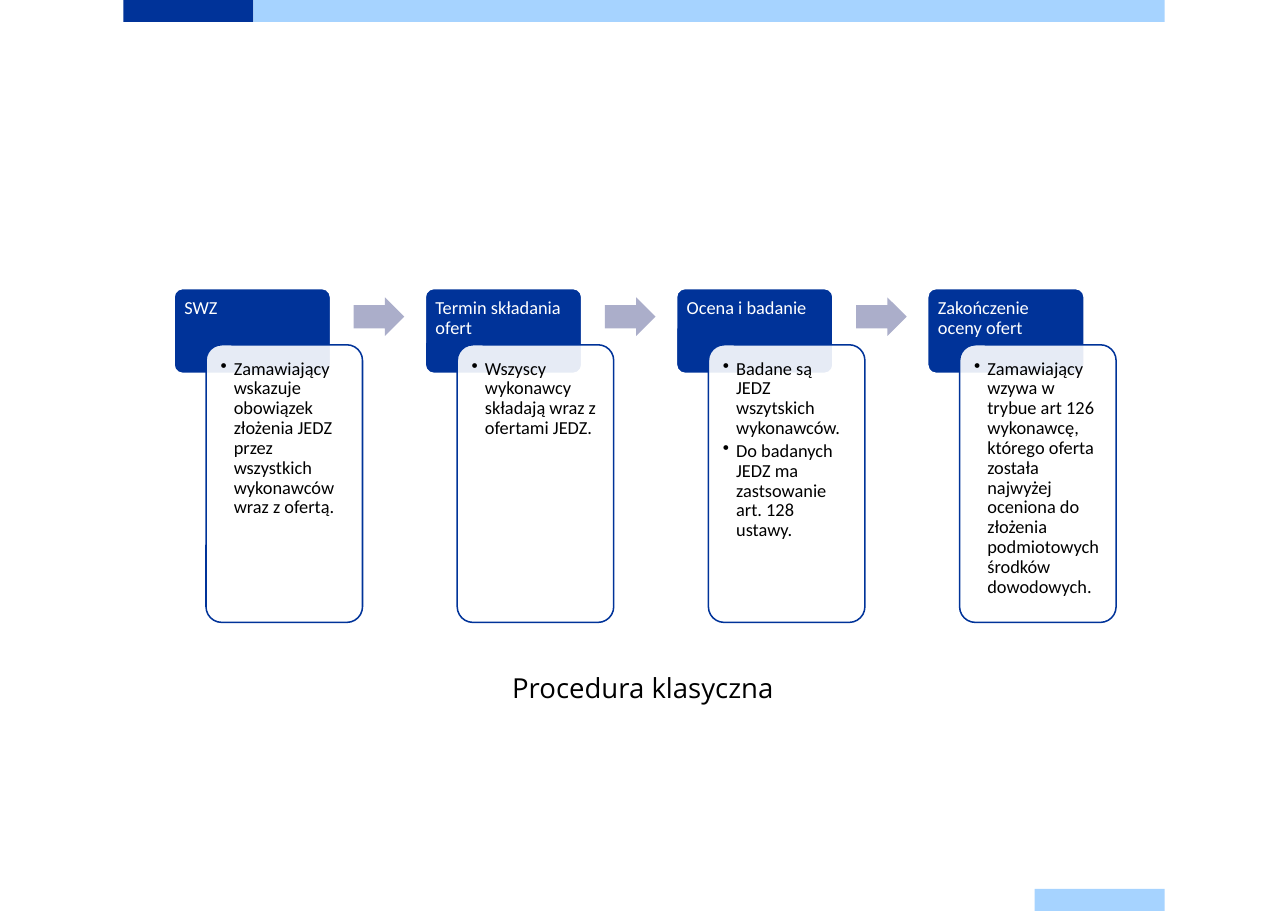
from lxml.etree import SubElement
from pptx import Presentation
from pptx.dml.color import RGBColor
from pptx.enum.shapes import MSO_SHAPE
from pptx.enum.text import MSO_ANCHOR, MSO_AUTO_SIZE, PP_ALIGN
from pptx.oxml.ns import qn
from pptx.util import Inches, Pt

NAVY = "003399"
SKY = "A6D3FF"
WHITE = "FFFFFF"
BLACK = "000000"
STEP = 2.28


def add_block(kind, left, top, width, height, fill, line=None):
    block = page.shapes.add_shape(kind, Inches(left), Inches(top), Inches(width), Inches(height))
    block.shadow.inherit = False
    block.fill.solid()
    block.fill.fore_color.rgb = RGBColor.from_string(fill)
    if line:
        block.line.color.rgb = RGBColor.from_string(line)
        block.line.width = Pt(1)
    else:
        block.line.fill.background()
    return block


def write(box, texts, color, inset, space_after=0, bulleted=False):
    frame = box.text_frame
    frame.word_wrap = True
    frame.vertical_anchor = MSO_ANCHOR.TOP
    frame.margin_left = frame.margin_right = frame.margin_top = frame.margin_bottom = Inches(inset)
    for number, text in enumerate(texts):
        para = frame.add_paragraph() if number else frame.paragraphs[0]
        para.alignment = PP_ALIGN.LEFT
        para.line_spacing = 0.9
        para.space_after = Pt(space_after)
        if bulleted:
            properties = para._p.get_or_add_pPr()
            properties.set("marL", str(Inches(0.12)))
            properties.set("indent", str(Inches(-0.12)))
            SubElement(properties, qn("a:buChar"), char="•")
        span = para.add_run()
        span.text = text
        span.font.name = "Calibri"
        span.font.size = Pt(12)
        span.font.color.rgb = RGBColor.from_string(color)


deck = Presentation()
deck.slide_width = Inches(11.69)
deck.slide_height = Inches(8.27)
page = deck.slides.add_slide(deck.slide_layouts[6])

for left, top, width, color in [(1.12, 0, 1.18, NAVY), (2.3, 0, 8.27, SKY), (9.39, 8.07, 1.18, SKY)]:
    add_block(MSO_SHAPE.RECTANGLE, left, top, width, 0.2, color)

stages = [
    ("SWZ", ["Zamawiający wskazuje obowiązek złożenia JEDZ przez wszystkich wykonawców wraz z ofertą."]),
    ("Termin składania ofert", ["Wszyscy wykonawcy składają wraz z ofertami JEDZ."]),
    ("Ocena i badanie", [
        "Badane są JEDZ wszytskich wykonawców.",
        "Do badanych JEDZ ma zastsowanie art. 128 ustawy.",
    ]),
    ("Zakończenie oceny ofert", [
        "Zamawiający wzywa w trybue art 126 wykonawcę, którego oferta została najwyżej "
        "oceniona do złożenia podmiotowych środków dowodowych.",
    ]),
]

for index, (heading, details) in enumerate(stages):
    left = 1.58 + index * STEP

    header = add_block(MSO_SHAPE.ROUNDED_RECTANGLE, left, 2.62, 1.42, 0.77, NAVY, WHITE)
    header.adjustments[0] = 0.1
    write(header, [heading], WHITE, 0.07)

    card = add_block(MSO_SHAPE.ROUNDED_RECTANGLE, left + 0.29, 3.13, 1.42, 2.52, WHITE, NAVY)
    card.adjustments[0] = 0.1
    card_color = card._element.spPr.find(qn("a:solidFill")).find(qn("a:srgbClr"))
    SubElement(card_color, qn("a:alpha"), val="90000")
    write(card, details, BLACK, 0.09, space_after=2, bulleted=True)

    if index < len(stages) - 1:
        arrow = add_block(MSO_SHAPE.RIGHT_ARROW, left + 1.63, 2.7, 0.46, 0.35, "ABAECA")
        arrow.adjustments[0] = 0.6
        arrow.adjustments[1] = 0.5

caption = page.shapes.add_textbox(Inches(4.55), Inches(6.04), Inches(2.6), Inches(0.4))
caption.text_frame.word_wrap = False
caption.text_frame.auto_size = MSO_AUTO_SIZE.SHAPE_TO_FIT_TEXT
span = caption.text_frame.paragraphs[0].add_run()
span.text = "Procedura klasyczna"
span.font.name = "Open Sans"
span.font.size = Pt(18)
span.font.color.rgb = RGBColor.from_string(BLACK)

deck.save("out.pptx")
